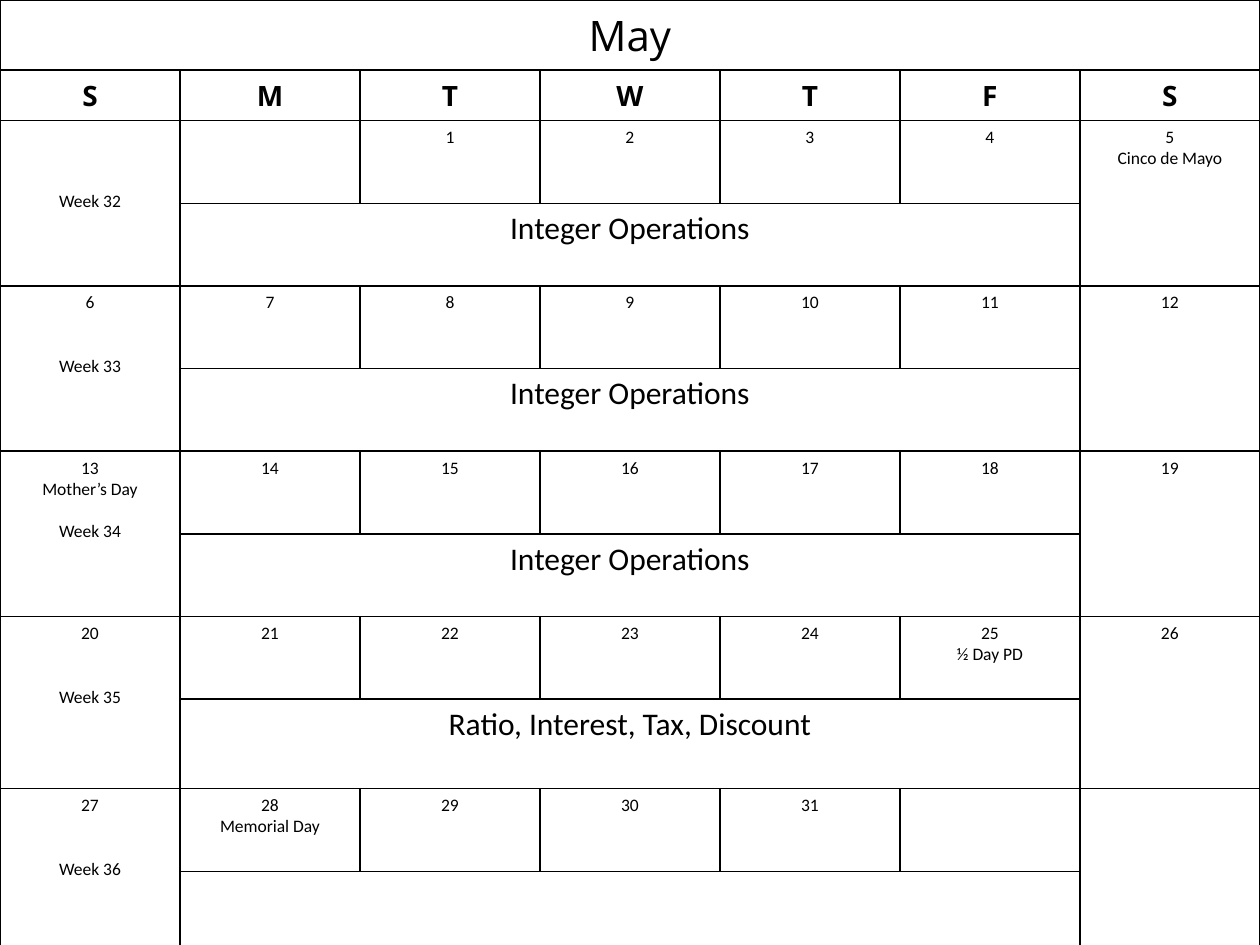
import pptx
import pptx.util
import pptx.dml.color
import pptx.enum.text
import pptx.oxml.ns
import lxml.etree

Pt = pptx.util.Pt
INK = "000000"
PAPER = "FFFFFF"
LINE_HEIGHT = 12.2
MARGIN = 3.6
TITLE = {"size": Pt(24), "name": "Open Sans", "bold": False}
WEEKDAY = {"size": Pt(16), "name": "Open Sans", "bold": True}
DAY = {"size": Pt(10), "name": "Calibri", "bold": False}
TOPIC = {"size": Pt(18), "name": "Calibri", "bold": False}

FIRST_WEEK = 32
FIRST_DAY_OFFSET = 2
LAST_DAY = 31
EVENTS = {5: "Cinco de Mayo", 13: "Mother’s Day", 25: "½ Day PD", 28: "Memorial Day"}
TOPICS = ["Integer Operations"] * 3 + ["Ratio, Interest, Tax, Discount", ""]


def color(value):
    return pptx.dml.color.RGBColor.from_string(value)


def style_cell(cell):
    properties = cell._tc.get_or_add_tcPr()
    qn = pptx.oxml.ns.qn
    for side in ("lnL", "lnR", "lnT", "lnB"):
        border = lxml.etree.SubElement(properties, qn("a:" + side), w=str(Pt(1)))
        fill = lxml.etree.SubElement(border, qn("a:solidFill"))
        lxml.etree.SubElement(fill, qn("a:srgbClr"), val=INK)
    cell.fill.solid()
    cell.fill.fore_color.rgb = color(PAPER)


def write_cell(cell, lines, style):
    for index, line in enumerate(lines):
        frame = cell.text_frame
        paragraph = frame.add_paragraph() if index else frame.paragraphs[0]
        paragraph.alignment = pptx.enum.text.PP_ALIGN.CENTER
        run = paragraph.add_run()
        run.text = line
        for name, value in style.items():
            setattr(run.font, name, value)
        run.font.color.rgb = color(INK)


def day_lines(week, weekday):
    day = week * 7 + weekday - FIRST_DAY_OFFSET + 1
    if not 1 <= day <= LAST_DAY:
        return []
    return [str(day)] + ([EVENTS[day]] if day in EVENTS else [])


def add_week(table, week, topic):
    top = 2 + 2 * week
    for column in (0, 6):
        table.cell(top, column).merge(table.cell(top + 1, column))
    table.cell(top + 1, 1).merge(table.cell(top + 1, 5))
    sunday = day_lines(week, 0)
    gap = (3 - len(sunday)) * LINE_HEIGHT
    cell = table.cell(top, 0)
    write_cell(cell, sunday + [f"Week {FIRST_WEEK + week}"], DAY)
    if sunday:
        cell.text_frame.paragraphs[-1].space_before = Pt(gap)
    else:
        cell.margin_top = Pt(MARGIN + gap)
    for weekday in range(1, 7):
        write_cell(table.cell(top, weekday), day_lines(week, weekday), DAY)
    if topic:
        write_cell(table.cell(top + 1, 1), [topic], TOPIC)


def add_calendar(slide, left, top, width, height):
    row_heights = [36.7, 26.6] + [47.25] * 10
    row_heights[9] = 51.2
    shape = slide.shapes.add_table(12, 7, Pt(left), Pt(top), Pt(width), Pt(height))
    table = shape.table
    table.first_row = False
    table.horz_banding = False
    for column in table.columns:
        column.width = Pt(width / 7)
    for row, row_height in zip(table.rows, row_heights):
        row.height = Pt(row_height)
    for cell in table.iter_cells():
        style_cell(cell)
    table.cell(0, 0).merge(table.cell(0, 6))
    write_cell(table.cell(0, 0), ["May"], TITLE)
    for column, letter in enumerate("SMTWTFS"):
        write_cell(table.cell(1, column), [letter], WEEKDAY)
    for week, topic in enumerate(TOPICS):
        add_week(table, week, topic)


def main():
    presentation = pptx.Presentation()
    presentation.slide_width = Pt(720)
    presentation.slide_height = Pt(540)
    slide = presentation.slides.add_slide(presentation.slide_layouts[6])
    add_calendar(slide, 0, 0, 720, 540)
    presentation.save("out.pptx")


if __name__ == "__main__":
    main()
